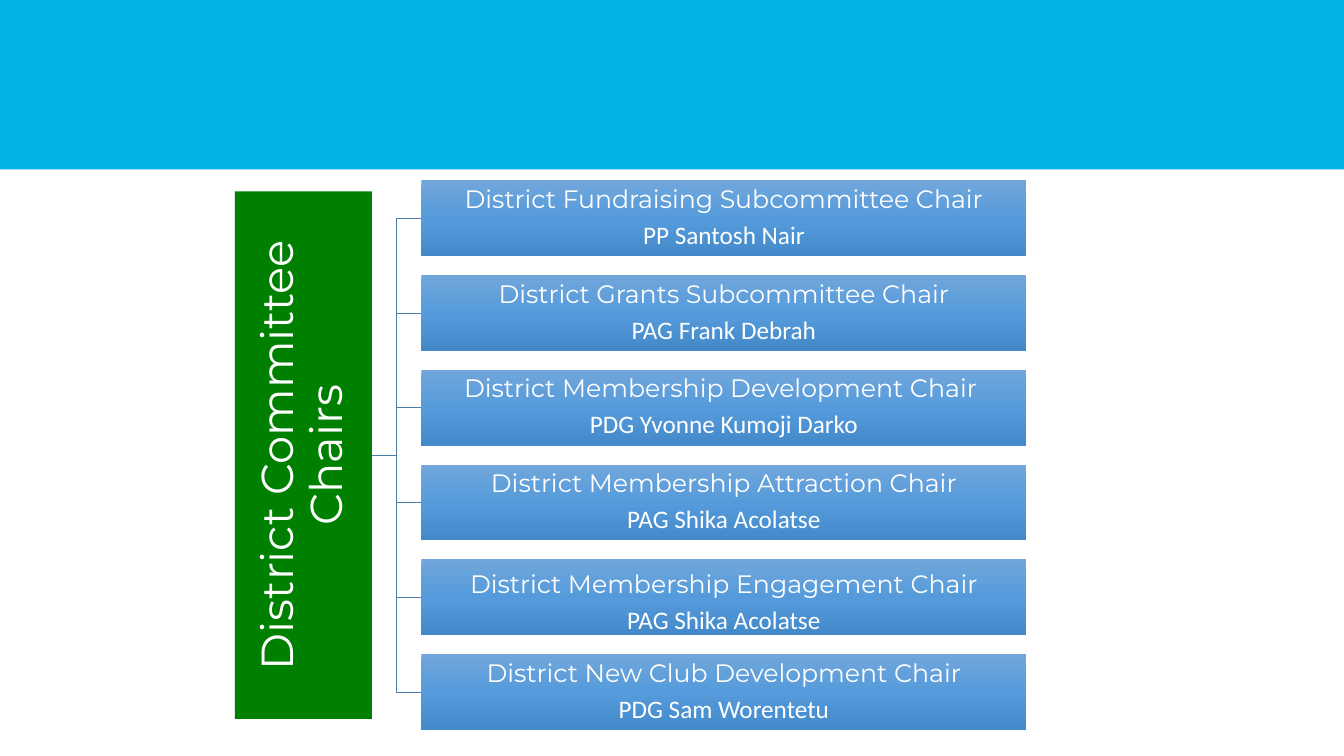
import copy

import pptx
import pptx.dml.color
import pptx.enum.shapes
import pptx.enum.text
import pptx.oxml.ns
import pptx.util

COLORS = {
    "banner": "01B4E7", "label": "008000", "line": "497CAB", "text": "FFFFFF",
    "bar_top": "71A6DB", "bar_mid": "559BDB", "bar_end": "448ACA",
}
CHAIRS = [
    ("District Fundraising Subcommittee Chair", "PP Santosh Nair"),
    ("District Grants Subcommittee Chair", "PAG Frank Debrah"),
    ("District Membership Development Chair ", "PDG Yvonne Kumoji Darko"),
    ("District Membership Attraction Chair", "PAG Shika Acolatse"),
    ("District Membership Engagement Chair", "PAG Shika Acolatse"),
    ("District New Club Development Chair", "PDG Sam Worentetu"),
]
LOWERED_TITLE = "District Membership Engagement Chair"


def rgb(name):
    """Return the named colour."""
    return pptx.dml.color.RGBColor.from_string(COLORS[name])


def add_box(slide, box, color):
    """Add a plain filled rectangle."""
    s = slide.shapes.add_shape(
        pptx.enum.shapes.MSO_SHAPE.RECTANGLE, *(pptx.util.Inches(v) for v in box))
    s.shadow.inherit = False
    s.line.fill.background()
    s.fill.solid()
    s.fill.fore_color.rgb = rgb(color)
    return s


def set_text(s, lines, size, inset):
    """Write centred lines, each given with its font."""
    tf = s.text_frame
    tf.word_wrap = True
    tf.vertical_anchor = pptx.enum.text.MSO_ANCHOR.MIDDLE
    tf.margin_left = tf.margin_right = pptx.util.Inches(inset)
    tf.margin_top = tf.margin_bottom = pptx.util.Inches(inset)
    tf.text = "\n".join(text for text, font in lines)
    for p, (text, font) in zip(tf.paragraphs, lines):
        p.alignment = pptx.enum.text.PP_ALIGN.CENTER
        p.line_spacing = 0.9
        p.space_after = pptx.util.Pt(0.35 * size)
        for r in p.runs:
            r.font.name = font
            r.font.size = pptx.util.Pt(size)
            r.font.color.rgb = rgb("text")


def shade(s):
    """Give a bar its three-stop gradient from top to bottom."""
    s.fill.gradient()
    s.fill.gradient_angle = 270
    stops = s._element.spPr.find(".//" + pptx.oxml.ns.qn("a:gsLst"))
    stops.insert(1, copy.deepcopy(stops[0]))
    names = ("bar_top", "bar_mid", "bar_end")
    for stop, position, name in zip(s.fill.gradient_stops, (0, 0.5, 1), names):
        stop.position = position
        stop.color.rgb = rgb(name)


def add_branch(slide, x, y, end_x, end_y):
    """Draw an elbow line from the label to a bar."""
    x, y, end_x, end_y = (pptx.util.Inches(v) for v in (x, y, end_x, end_y))
    mid = (x + end_x) // 2
    builder = slide.shapes.build_freeform(x, y)
    builder.add_line_segments([(mid, y), (mid, end_y), (end_x, end_y)], close=False)
    s = builder.convert_to_shape()
    s.shadow.inherit = False
    s.fill.background()
    s.line.color.rgb = rgb("line")
    s.line.width = pptx.util.Pt(0.5)


def add_label(slide, box):
    """Add the upright label, turned to read from bottom to top."""
    x, y, w, h = box
    s = add_box(slide, (x + (w - h) / 2, y + (h - w) / 2, h, w), "label")
    s.rotation = 270
    set_text(s, [("District Committee Chairs", "Montserrat")], 32, 0.02)


def add_bar(slide, box, title, name):
    """Add one chair's bar with title and name."""
    s = add_box(slide, box, "bar_mid")
    shade(s)
    set_text(s, [(title, "Montserrat"), (name, "Calibri")], 18, 0.01)
    if title == LOWERED_TITLE:
        s.text_frame.margin_top = pptx.util.Inches(0.13)


def add_tree(slide, box):
    """Place label, branches and bars on a grid of 16 columns and 5 rows a chair."""
    x, y, w, h = box
    col, row = w / 16, h / (5 * len(CHAIRS) - 1)
    label_w = 2.77 * col
    bar_x = x + label_w + col
    tops = [y + 5 * row * i for i in range(len(CHAIRS))]
    for top in tops:
        add_branch(slide, x + label_w, y + h / 2, bar_x, top + 2 * row)
    add_label(slide, (x, y + 0.02 * h, label_w, 0.96 * h))
    for top, (title, name) in zip(tops, CHAIRS):
        add_bar(slide, (bar_x, top, x + w - bar_x, 4 * row), title, name)


def main():
    """Build and save the slide."""
    prs = pptx.Presentation()
    prs.slide_width = pptx.util.Inches(13.33)
    prs.slide_height = pptx.util.Inches(7.5)
    slide = prs.slides.add_slide(prs.slide_layouts[6])
    add_box(slide, (0, 0, 13.33, 1.68), "banner")
    add_tree(slide, (2.33, 1.79, 7.85, 5.45))
    prs.save("out.pptx")


if __name__ == "__main__":
    main()
